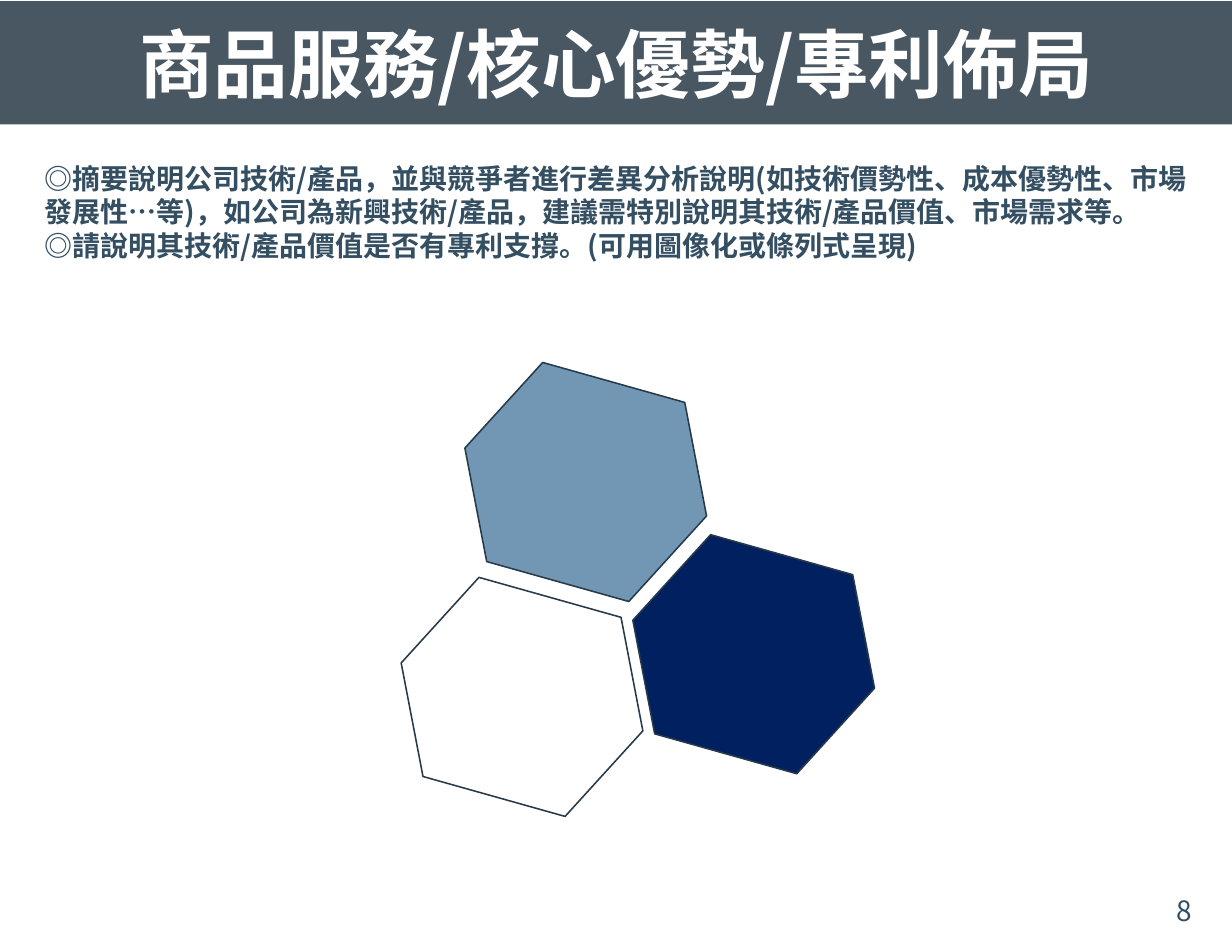
from pptx import Presentation
from pptx.dml.color import RGBColor
from pptx.enum.shapes import MSO_SHAPE
from pptx.enum.text import MSO_ANCHOR, MSO_AUTO_SIZE, PP_ALIGN
from pptx.oxml.ns import qn
from pptx.util import Inches, Pt
from lxml import etree

HEXAGON = MSO_SHAPE.HEXAGON
MIDDLE, TOP = MSO_ANCHOR.MIDDLE, MSO_ANCHOR.TOP
LEFT, CENTER, RIGHT = PP_ALIGN.LEFT, PP_ALIGN.CENTER, PP_ALIGN.RIGHT
NO_FIT = MSO_AUTO_SIZE.NONE

SLATE = RGBColor(0x49, 0x57, 0x62)
INK = RGBColor(0x34, 0x4E, 0x62)
OUTLINE = RGBColor(0x26, 0x3A, 0x49)
STEEL = RGBColor(0x72, 0x97, 0xB4)
NAVY = RGBColor(0x00, 0x20, 0x60)
WHITE = RGBColor(0xFF, 0xFF, 0xFF)

SANS_SC = "Noto Sans CJK SC"
SANS_TC = "Noto Sans CJK TC"
WIDTH, HEIGHT = 11, 8.5

TITLE = "商品服務/核心優勢/專利佈局"
NOTES = [
    "◎摘要說明公司技術/產品，並與競爭者進行差異分析說明(如技術價勢性、成本優勢性、"
    "市場發展性…等)，如公司為新興技術/產品，建議需特別說明其技術/產品價值、市場需求等。",
    "◎請說明其技術/產品價值是否有專利支撐。(可用圖像化或條列式呈現)",
]


def write(frame, lines, size, font, color, bold=False, align=LEFT, anchor=TOP):
    frame.word_wrap = True
    frame.auto_size = NO_FIT
    frame.vertical_anchor = anchor
    for index, line in enumerate(lines):
        para = frame.add_paragraph() if index else frame.paragraphs[0]
        para.alignment = align
        span = para.add_run()
        span.text = line
        span.font.size = Pt(size)
        span.font.bold = bold
        span.font.name = font
        span.font.color.rgb = color
        # East Asian glyphs need their own typeface entry
        east_asian = etree.SubElement(span.font._element, qn("a:ea"))
        east_asian.set("typeface", font)


def add_title_band(page, left, top, width, height):
    band = page.shapes.title
    band.left, band.top = Inches(left), Inches(top)
    band.width, band.height = Inches(width), Inches(height)
    band.fill.solid()
    band.fill.fore_color.rgb = SLATE
    write(band.text_frame, [TITLE], 48, SANS_SC, WHITE, True, CENTER, MIDDLE)


def add_text(page, left, top, width, height, lines, **style):
    box = page.shapes.add_textbox(Inches(left), Inches(top), Inches(width), Inches(height))
    write(box.text_frame, lines, 18, color=INK, **style)


def add_honeycomb(page, left, top, width, height):
    """Three tilted hexagons, placed as shares of the cluster's box."""
    cell_width, cell_height = 0.52 * width, 0.49 * height
    cells = [(0.132, 0, STEEL), (0.48, 0.408, NAVY), (0, 0.509, WHITE)]
    for across, down, color in cells:
        cell = page.shapes.add_shape(
            HEXAGON,
            Inches(left + across * width), Inches(top + down * height),
            Inches(cell_width), Inches(cell_height),
        )
        cell.rotation = 15.7
        cell.shadow.inherit = False
        cell.fill.solid()
        cell.fill.fore_color.rgb = color
        cell.line.color.rgb = OUTLINE
        cell.line.width = Pt(1)


def main():
    deck = Presentation()
    deck.slide_width, deck.slide_height = Inches(WIDTH), Inches(HEIGHT)
    page = deck.slides.add_slide(deck.slide_layouts[5])

    # Title band across the full width
    add_title_band(page, 0, 0.01, WIDTH, 1.1)
    # Guidance text
    add_text(page, 0.3, 1.39, 10.44, 1.01, NOTES, font=SANS_SC, bold=True)
    # Hexagon cluster
    add_honeycomb(page, 3.54, 3.38, 4.31, 3.77)
    # Page number
    add_text(page, 8.17, 7.93, 2.57, 0.44, ["8"], font=SANS_TC, align=RIGHT)

    deck.save("out.pptx")


if __name__ == "__main__":
    main()
